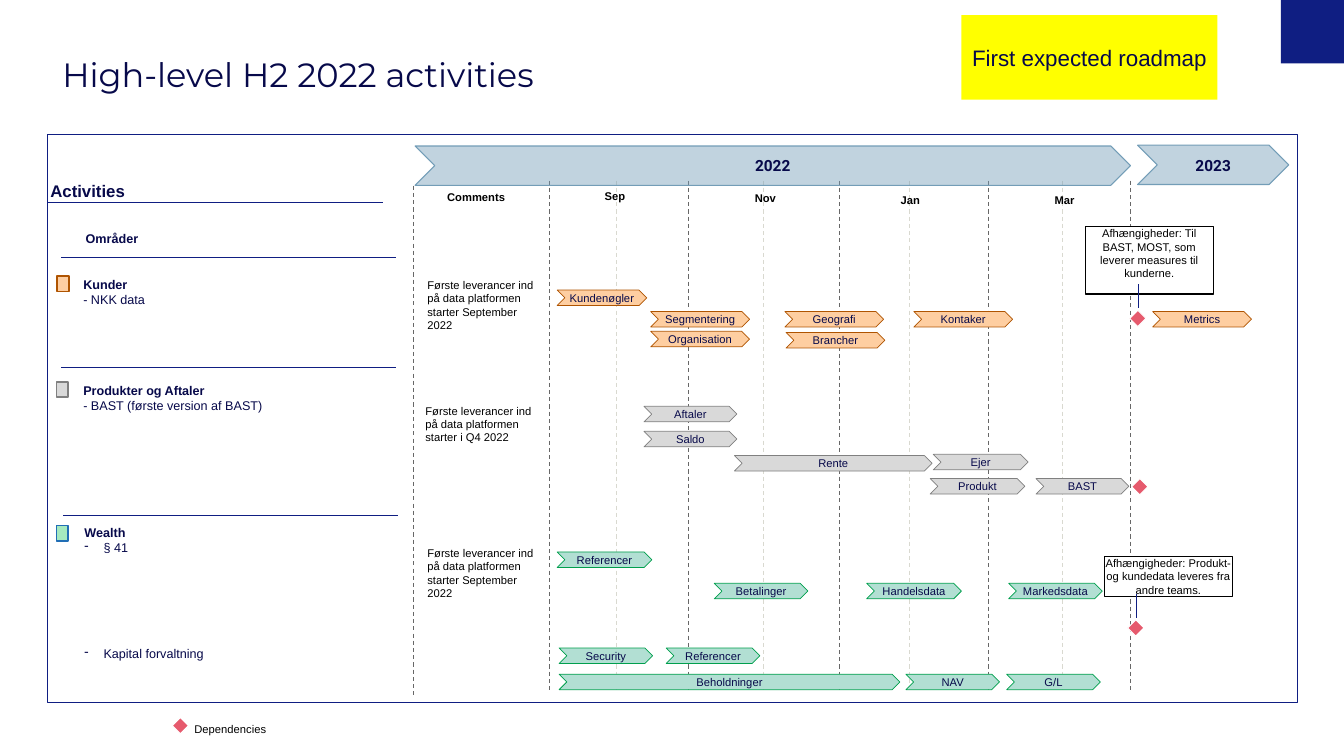
from dataclasses import dataclass, field

from lxml import etree
from pptx import Presentation
from pptx.dml.color import RGBColor
from pptx.enum.dml import MSO_LINE_DASH_STYLE as Dash
from pptx.enum.shapes import MSO_CONNECTOR as Connector, MSO_SHAPE as Shape
from pptx.enum.text import MSO_ANCHOR as Anchor, PP_ALIGN as Align
from pptx.oxml.ns import qn
from pptx.util import Cm, Pt

NAVY = RGBColor(0x0F, 0x1E, 0x82)
INK = RGBColor(0x07, 0x09, 0x4A)
BLACK = RGBColor(0, 0, 0)
WHITE = RGBColor(0xFF, 0xFF, 0xFF)
YELLOW = RGBColor(0xFF, 0xFF, 0)
STEEL = RGBColor(0x73, 0x9D, 0xB7)
DARK_GRID = RGBColor(0x67, 0x67, 0x67)
PALE_GRID = RGBColor(0xD9, 0xD9, 0xD0)
ROSE = RGBColor(0xE6, 0x5A, 0x6D)
ORANGE, BROWN = RGBColor(0xFE, 0xCE, 0xA1), RGBColor(0xAF, 0x54, 0x01)
SILVER, GREY = RGBColor(0xD9, 0xD9, 0xD9), RGBColor(0x80, 0x80, 0x80)
MINT, GREEN = RGBColor(0xB2, 0xDF, 0xD3), RGBColor(0, 0x9F, 0x4D)
LIGHT_GREEN, BLUE = RGBColor(0xA5, 0xE9, 0xBF), RGBColor(0x21, 0x6E, 0xB5)

BAR_HEIGHT = 0.39
DIAMOND_SIZE = 0.41


@dataclass
class Box:
    """Area in centimetres."""
    left: float
    top: float
    width: float
    height: float

    def inner(self, left, top, width, height):
        return Box(self.left + left, self.top + top, width, height)

    def lengths(self):
        return Cm(self.left), Cm(self.top), Cm(self.width), Cm(self.height)


@dataclass
class Lane:
    top: float
    height: float
    rule_left: float
    swatch: tuple  # left, top, fill, line
    label: tuple  # left, top
    lines: list
    comment: tuple  # left, top, text
    colors: tuple  # fill, line
    bars: list  # left, top, width, text
    diamond: tuple
    callout: tuple = ()  # left, top, height, text
    bullets: bool = field(default=False)


LANES = [
    Lane(6.5, 2.77, 0.36, (0.25, 0.46, ORANGE, BROWN), (0.91, 0.37),
         ["Kunder", "- NKK data"],
         (9.58, 0.51, "Første leverancer ind på data platformen starter September 2022"),
         (ORANGE, BROWN),
         [(12.85, 0.81, 2.26, "Kundenøgler"), (15.21, 1.35, 2.49, "Segmentering"),
          (15.21, 1.85, 2.49, "Organisation"), (18.59, 1.35, 2.49, "Geografi"),
          (18.62, 1.88, 2.49, "Brancher"), (21.84, 1.35, 2.49, "Kontaker"),
          (27.86, 1.35, 2.49, "Metrics")],
         (27.28, 1.32),
         (26.16, -0.79, 1.7,
          "Afhængigheder: Til BAST, MOST, som leverer measures til kunderne.")),
    Lane(9.27, 3.73, 0.36, (0.23, 0.36, SILVER, GREY), (0.91, 0.28),
         ["Produkter og Aftaler", "- BAST (første version af BAST)"],
         (9.53, 0.91, "Første leverancer ind på data platformen starter i Q4 2022"),
         (SILVER, GREY),
         [(15.04, 0.97, 2.34, "Aftaler"), (15.04, 1.6, 2.34, "Saldo"),
          (17.32, 2.21, 4.98, "Rente"), (22.33, 2.18, 2.39, "Ejer"),
          (22.25, 2.79, 2.39, "Produkt"), (24.92, 2.79, 2.34, "BAST")],
         (27.33, 2.79)),
    Lane(13, 4.71, 0.41, (0.23, 0.25, LIGHT_GREEN, BLUE), (0.94, 0.13),
         ["Wealth", "§ 41", "Kapital forvaltning"],
         (9.58, 0.76, "Første leverancer ind på data platformen starter September 2022"),
         (MINT, GREEN),
         [(12.85, 0.91, 2.39, "Referencer"), (16.81, 1.7, 2.36, "Betalinger"),
          (20.65, 1.7, 2.39, "Handelsdata"), (24.23, 1.7, 2.36, "Markedsdata"),
          (12.9, 3.33, 2.36, "Security"), (15.6, 3.33, 2.36, "Referencer"),
          (12.9, 3.99, 8.59, "Beholdninger"), (21.64, 3.99, 2.36, "NAV"),
          (24.18, 3.99, 2.36, "G/L")],
         (27.23, 2.62),
         (26.64, 1.02, 1.02,
          "Afhængigheder: Produkt- og kundedata leveres fra andre teams."),
         bullets=True),
]


def write(shape, text, size=8, color=BLACK, bold=False, font="Arial",
          align=Align.LEFT, anchor=Anchor.TOP, margins=(0, 0)):
    frame = shape.text_frame
    frame.text = text
    frame.word_wrap = True
    frame.vertical_anchor = anchor
    frame.margin_left = frame.margin_right = Cm(margins[0])
    frame.margin_top = frame.margin_bottom = Cm(margins[1])
    for paragraph in frame.paragraphs:
        paragraph.alignment = align
        for run in paragraph.runs:
            run.font.size, run.font.bold, run.font.name = Pt(size), bold, font
            run.font.color.rgb = color
    return frame


def add_text(slide, box, text, **style):
    return write(slide.shapes.add_textbox(*box.lengths()), text, **style)


def add_block(slide, kind, box, fill=None, line=None, weight=0.75):
    shape = slide.shapes.add_shape(kind, *box.lengths())
    shape.shadow.inherit = False
    for part, color in ((shape.fill, fill), (shape.line.fill, line)):
        if color is None:
            part.background()
        else:
            part.solid()
            part.fore_color.rgb = color
    if line is not None:
        shape.line.width = Pt(weight)
    return shape


def add_rule(slide, start, end, color=NAVY, weight=0.75, dashed=False):
    rule = slide.shapes.add_connector(
        Connector.STRAIGHT, *(Cm(value) for value in (*start, *end)))
    rule.line.color.rgb = color
    rule.line.width = Pt(weight)
    if dashed:
        rule.line.dash_style = Dash.DASH
    etree.SubElement(rule._element.spPr, qn("a:effectLst"))


def add_diamond(slide, box, left, top):
    area = box.inner(left, top, DIAMOND_SIZE, DIAMOND_SIZE)
    add_block(slide, Shape.DIAMOND, area, ROSE, WHITE)
    return area


def draw_header(slide, box):
    add_block(slide, Shape.RECTANGLE, box.inner(32.28, 0, 1.6, 1.6), NAVY)
    add_text(slide, box.inner(1.57, 1.37, 22, 2.67), "High-level H2 2022 activities",
             size=24, color=INK, font="Montserrat")
    badge = add_block(slide, Shape.RECTANGLE, box.inner(24.23, 0.38, 6.45, 2.13), YELLOW)
    write(badge, "First expected roadmap", size=16, color=INK, align=Align.CENTER,
          anchor=Anchor.MIDDLE, margins=(0.25, 0.13))


def draw_timeline(slide, box):
    add_block(slide, Shape.RECTANGLE, box, line=NAVY)
    # Month grid
    grid = [(x, 1.17, DARK_GRID) for x in (12.65, 16.15, 19.96, 23.72, 27.3)]
    grid += [(x, 1.17, PALE_GRID) for x in (14.35, 18.06, 21.74, 25.58)]
    grid.append((9.22, 1.3, DARK_GRID))
    for x, y, color in grid:
        add_rule(slide, (box.left + x, box.top + y),
                 (box.left + x, box.top + y + 12.9), color, dashed=True)
    # Year arrows
    for left, top, width, year in ((9.27, 0.3, 18.03, "2022"), (27.48, 0.28, 3.81, "2023")):
        arrow = add_block(slide, Shape.CHEVRON, box.inner(left, top, width, 0.99), STEEL, STEEL)
        fill_color = arrow._element.spPr.find(qn("a:solidFill"))[0]
        etree.SubElement(fill_color, qn("a:alpha"), val="44000")
        write(arrow, year, size=11, color=INK, bold=True, font="Roboto",
              align=Align.CENTER, anchor=Anchor.MIDDLE, margins=(0.1, 0.1))
    # Column headings
    for left, top, heading in ((9.91, 1.32, "Comments"), (13.41, 1.3, "Sep"),
                               (17.2, 1.35, "Nov"), (20.85, 1.4, "Jan"), (24.74, 1.4, "Mar")):
        add_text(slide, box.inner(left, top, 1.8, 0.53), heading, bold=True,
                 align=Align.CENTER, anchor=Anchor.MIDDLE, margins=(0, 0.1))
    # Activity headings
    activities = add_block(slide, Shape.RECTANGLE, box.inner(0.08, 1.14, 8.99, 0.58), WHITE, WHITE)
    write(activities, "Activities", size=12, color=INK, bold=True, anchor=Anchor.MIDDLE)
    add_rule(slide, (box.left, box.top + 1.73), (box.left + 8.46, box.top + 1.73))
    add_text(slide, box.inner(0.97, 2.34, 4.06, 0.79), "Områder", size=9, color=INK,
             bold=True, margins=(0, 0.1))


def draw_lane(slide, box, lane):
    add_rule(slide, (box.left + lane.rule_left, box.top),
             (box.left + lane.rule_left + 8.43, box.top))
    # Area label
    left, top, fill, line = lane.swatch
    add_block(slide, Shape.RECTANGLE, box.inner(left, top, 0.3, 0.38), fill, line, 1)
    frame = add_text(slide, box.inner(*lane.label, 7, 1.37), "\n".join(lane.lines),
                     size=9, color=INK, margins=(0, 0.1))
    frame.paragraphs[0].runs[0].font.bold = True
    if lane.bullets:
        for paragraph in frame.paragraphs[1:]:
            properties = paragraph._p.get_or_add_pPr()
            properties.set("marL", str(Cm(0.48)))
            properties.set("indent", str(-Cm(0.48)))
            etree.SubElement(properties, qn("a:buChar"), char="-")
        frame.paragraphs[-1].space_before = Pt(65)
    left, top, text = lane.comment
    add_text(slide, box.inner(left, top, 2.95, 1.37), text)
    # Deliveries
    for left, top, width, text in lane.bars:
        bar = add_block(slide, Shape.CHEVRON, box.inner(left, top, width, BAR_HEIGHT),
                        *lane.colors, 0.5)
        write(bar, text, color=INK, align=Align.CENTER, anchor=Anchor.MIDDLE,
              margins=(0.05, 0.1))
    # Dependency and its callout
    diamond = add_diamond(slide, box, *lane.diamond)
    if lane.callout:
        left, top, height, text = lane.callout
        note = add_block(slide, Shape.RECTANGLE, box.inner(left, top, 3.23, height), WHITE, BLACK)
        write(note, text, align=Align.CENTER)
        x, end = diamond.left + DIAMOND_SIZE / 2, diamond.top - 0.05
        add_rule(slide, (x, end - 0.61), (x, end), weight=0.25)


def draw_legend(slide, box):
    add_diamond(slide, box, 0, 0)
    add_text(slide, box.inner(0.56, 0.11, 5.54, 0.33), "Dependencies")


def main():
    presentation = Presentation()
    presentation.slide_width, presentation.slide_height = Cm(33.87), Cm(19.05)
    slide = presentation.slides.add_slide(presentation.slide_layouts[6])
    chart = Box(1.19, 3.38, 31.5, 14.33)
    draw_header(slide, Box(0, 0, 33.87, 3.38))
    draw_timeline(slide, chart)
    for lane in LANES:
        draw_lane(slide, Box(chart.left, lane.top, chart.width, lane.height), lane)
    draw_legend(slide, Box(4.34, 18.08, 6.1, 0.44))
    presentation.save("out.pptx")


if __name__ == "__main__":
    main()
